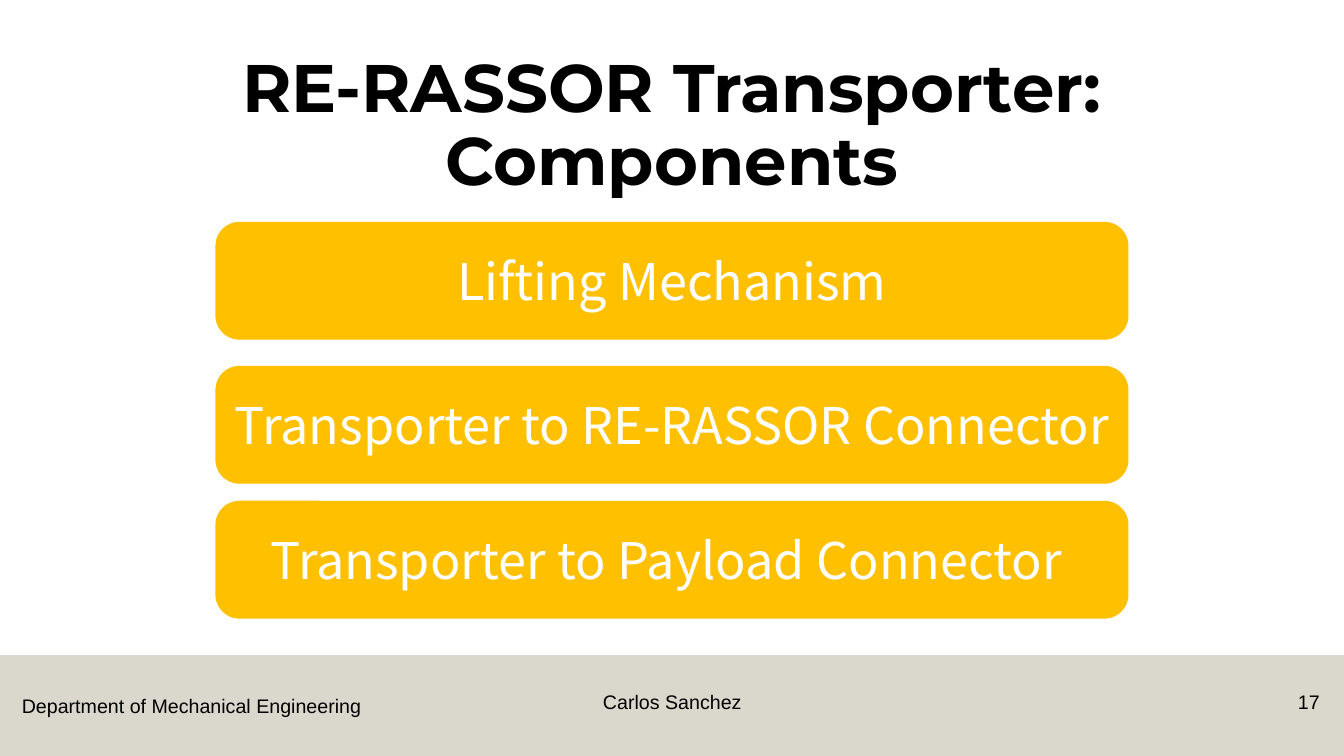
from lxml.etree import SubElement
from pptx import Presentation
from pptx.dml.color import RGBColor
from pptx.enum.shapes import MSO_SHAPE
from pptx.enum.text import MSO_ANCHOR, MSO_AUTO_SIZE, PP_ALIGN
from pptx.oxml.ns import qn
from pptx.util import Cm, Pt

BLACK = RGBColor(0x00, 0x00, 0x00)
WHITE = RGBColor(0xFF, 0xFF, 0xFF)
GOLD = RGBColor(0xFF, 0xC0, 0x00)
STONE = RGBColor(0xB7, 0xB0, 0x9C)


def write(frame, text, font_name, size, color, align):
    paragraph = frame.paragraphs[0]
    paragraph.text = text
    paragraph.alignment = align
    paragraph.font.name = font_name
    paragraph.font.size = Pt(size)
    paragraph.font.color.rgb = color
    return paragraph


def add_block(page, kind, left, top, width, height, color):
    block = page.shapes.add_shape(kind, Cm(left), Cm(top), Cm(width), Cm(height))
    block.shadow.inherit = False
    block.fill.solid()
    block.fill.fore_color.rgb = color
    block.line.fill.background()
    return block


deck = Presentation()
deck.slide_width = Cm(33.87)
deck.slide_height = Cm(19.05)
page = deck.slides.add_slide(deck.slide_layouts[5])

# Footer band, half transparent
band = add_block(page, MSO_SHAPE.RECTANGLE, 0, 16.51, 33.87, 2.54, STONE)
band_color = band.fill._xPr.find(qn("a:solidFill"))[0]
SubElement(band_color, qn("a:alpha"), val="50000")

# Footer texts: department, presenter, page number
footers = [
    ("Department of Mechanical Engineering", 0.3, 17.35, 9.12, 0.86, PP_ALIGN.LEFT, False),
    ("Carlos Sanchez", 11.23, 17.25, 11.43, 1.02, PP_ALIGN.CENTER, True),
    ("17", 31.55, 17.25, 1.96, 1.02, PP_ALIGN.RIGHT, True),
]
for text, left, top, width, height, align, wrap in footers:
    box = page.shapes.add_textbox(Cm(left), Cm(top), Cm(width), Cm(height))
    box.text_frame.word_wrap = wrap
    write(box.text_frame, text, "Arial", 14, BLACK, align)

# Component bars
components = [
    ("Lifting Mechanism", 5.59),
    ("Transporter to RE-RASSOR Connector", 9.22),
    ("Transporter to Payload Connector ", 12.62),
]
for text, top in components:
    bar = add_block(page, MSO_SHAPE.ROUNDED_RECTANGLE, 5.43, top, 23.01, 2.97, GOLD)
    bar.adjustments[0] = 0.205
    bar.text_frame.word_wrap = True
    bar.text_frame.vertical_anchor = MSO_ANCHOR.MIDDLE
    write(bar.text_frame, text, "Noto Sans CJK JP", 36, WHITE, PP_ALIGN.CENTER)

# Title
title = page.shapes.title
title.left, title.top, title.width, title.height = Cm(2.33), Cm(1.25), Cm(29.21), Cm(2.77)
title.text_frame.word_wrap = True
title.text_frame.auto_size = MSO_AUTO_SIZE.NONE
title.text_frame.vertical_anchor = MSO_ANCHOR.TOP
heading = write(title.text_frame, "RE-RASSOR Transporter: Components",
                "Montserrat", 48, BLACK, PP_ALIGN.CENTER)
heading.font.bold = True
heading.line_spacing = 0.9

deck.save("out.pptx")
